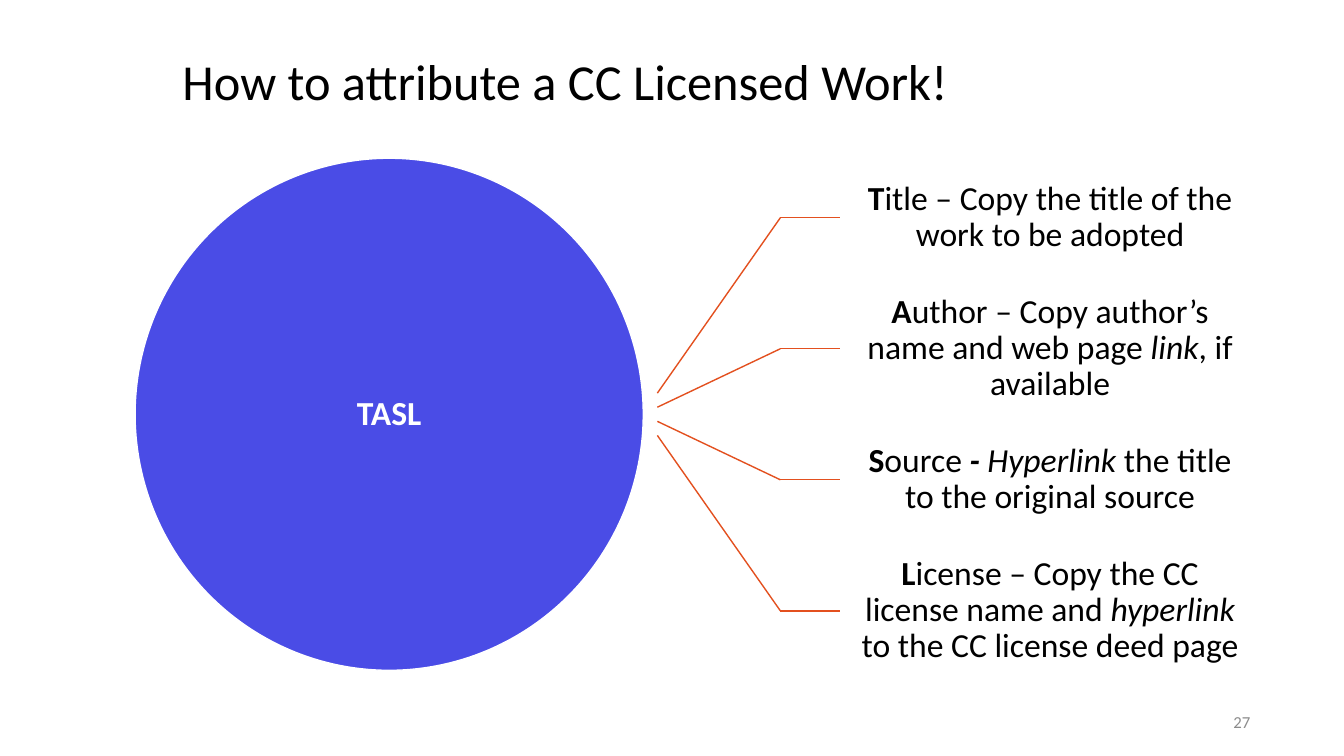
from lxml import etree
from pptx import Presentation
from pptx.dml.color import RGBColor
from pptx.enum.shapes import MSO_CONNECTOR, MSO_SHAPE
from pptx.enum.text import MSO_ANCHOR, MSO_AUTO_SIZE, PP_ALIGN
from pptx.oxml.ns import qn
from pptx.util import Inches, Pt

STRAIGHT = MSO_CONNECTOR.STRAIGHT
OVAL = MSO_SHAPE.OVAL
MIDDLE = MSO_ANCHOR.MIDDLE
NO_FIT = MSO_AUTO_SIZE.NONE
LEFT, CENTER, RIGHT = PP_ALIGN.LEFT, PP_ALIGN.CENTER, PP_ALIGN.RIGHT

FONT = "Calibri"
BLACK = RGBColor(0x00, 0x00, 0x00)
WHITE = RGBColor(0xFF, 0xFF, 0xFF)
GRAY = RGBColor(0x8C, 0x8C, 0x8C)
BLUE = RGBColor(0x4A, 0x4C, 0xE6)
ORANGE = RGBColor(0xE3, 0x50, 0x1F)

# Each span is its text and its style: "b" for bold, "i" for italic.
STEPS = [
    [("T", "b"), ("itle – Copy the title of the work to be adopted", "")],
    [("A", "b"), ("uthor – Copy author’s name and web page ", ""),
     ("link", "i"), (", if available", "")],
    [("S", "b"), ("ource", ""), (" - ", "bi"), ("Hyperlink", "i"),
     (" the title to the original source", "")],
    [("L", "b"), ("icense – Copy the CC license name and ", ""),
     ("hyperlink", "i"), (" to the CC license deed page", "")],
]
STEP_TOP, STEP_HEIGHT = 1.51, 1.3
STEP_LEFT, STEP_WIDTH = 8.33, 4.17
FAN_LEFT, FAN_BEND = 6.52, 7.74
FAN_MIDDLE, FAN_GAP = 4.11, 0.14


class Slide:
    def __init__(self, deck):
        self.page = deck.slides.add_slide(deck.slide_layouts[5])

    def fill_text(self, shape, spans, size, color, align, inset=(0.1, 0.05), spacing=0.9):
        """Fill a shape with one paragraph of styled spans."""
        frame = shape.text_frame
        frame.word_wrap = True
        frame.auto_size = NO_FIT
        frame.vertical_anchor = MIDDLE
        frame.margin_left = frame.margin_right = Inches(inset[0])
        frame.margin_top = frame.margin_bottom = Inches(inset[1])
        para = frame.paragraphs[0]
        para.alignment = align
        para.line_spacing = spacing
        para.font.name = FONT
        para.font.size = Pt(size)
        para.font.color.rgb = color
        for text, style in spans:
            span = para.add_run()
            span.text = text
            span.font.bold = "b" in style
            span.font.italic = "i" in style

    def title(self, text, left, top, width, height):
        box = self.page.shapes.title
        box.left, box.top = Inches(left), Inches(top)
        box.width, box.height = Inches(width), Inches(height)
        self.fill_text(box, [(text, "")], 36, BLACK, LEFT)

    def text(self, spans, left, top, width, height, **style):
        box = self.page.shapes.add_textbox(
            Inches(left), Inches(top), Inches(width), Inches(height))
        self.fill_text(box, spans, **style)

    def circle(self, text, left, top, width, height):
        shape = self.page.shapes.add_shape(
            OVAL, Inches(left), Inches(top), Inches(width), Inches(height))
        shape.shadow.inherit = False
        shape.fill.solid()
        shape.fill.fore_color.rgb = BLUE
        shape.line.color.rgb = WHITE
        shape.line.width = Pt(1)
        self.fill_text(shape, [(text, "b")], 24, WHITE, CENTER, inset=(0, 0))

    def line(self, start_x, start_y, end_x, end_y):
        line = self.page.shapes.add_connector(
            STRAIGHT, Inches(start_x), Inches(start_y), Inches(end_x), Inches(end_y))
        line.line.color.rgb = ORANGE
        line.line.width = Pt(1)
        etree.SubElement(line._element.spPr, qn("a:effectLst"))


def main():
    deck = Presentation()
    deck.slide_width, deck.slide_height = Inches(13.33), Inches(7.5)
    slide = Slide(deck)
    slide.title("How to attribute a CC Licensed Work!", 1.71, 0.4, 10.71, 0.87)
    slide.text([("27", "")], 9.42, 6.97, 3.08, 0.38,
               size=12, color=GRAY, align=RIGHT, spacing=1.0)
    slide.circle("TASL", 1.34, 1.57, 5.04, 5.08)

    for index, spans in enumerate(STEPS):
        top = STEP_TOP + index * STEP_HEIGHT
        middle = top + STEP_HEIGHT / 2
        fan_start = FAN_MIDDLE + (index - (len(STEPS) - 1) / 2) * FAN_GAP
        slide.line(FAN_LEFT, fan_start, FAN_BEND, middle)
        slide.line(FAN_BEND, middle, STEP_LEFT, middle)
        slide.text(spans, STEP_LEFT, top, STEP_WIDTH, STEP_HEIGHT,
                   size=24, color=BLACK, align=CENTER, inset=(0.16, 0.16))
    deck.save("out.pptx")


if __name__ == "__main__":
    main()
